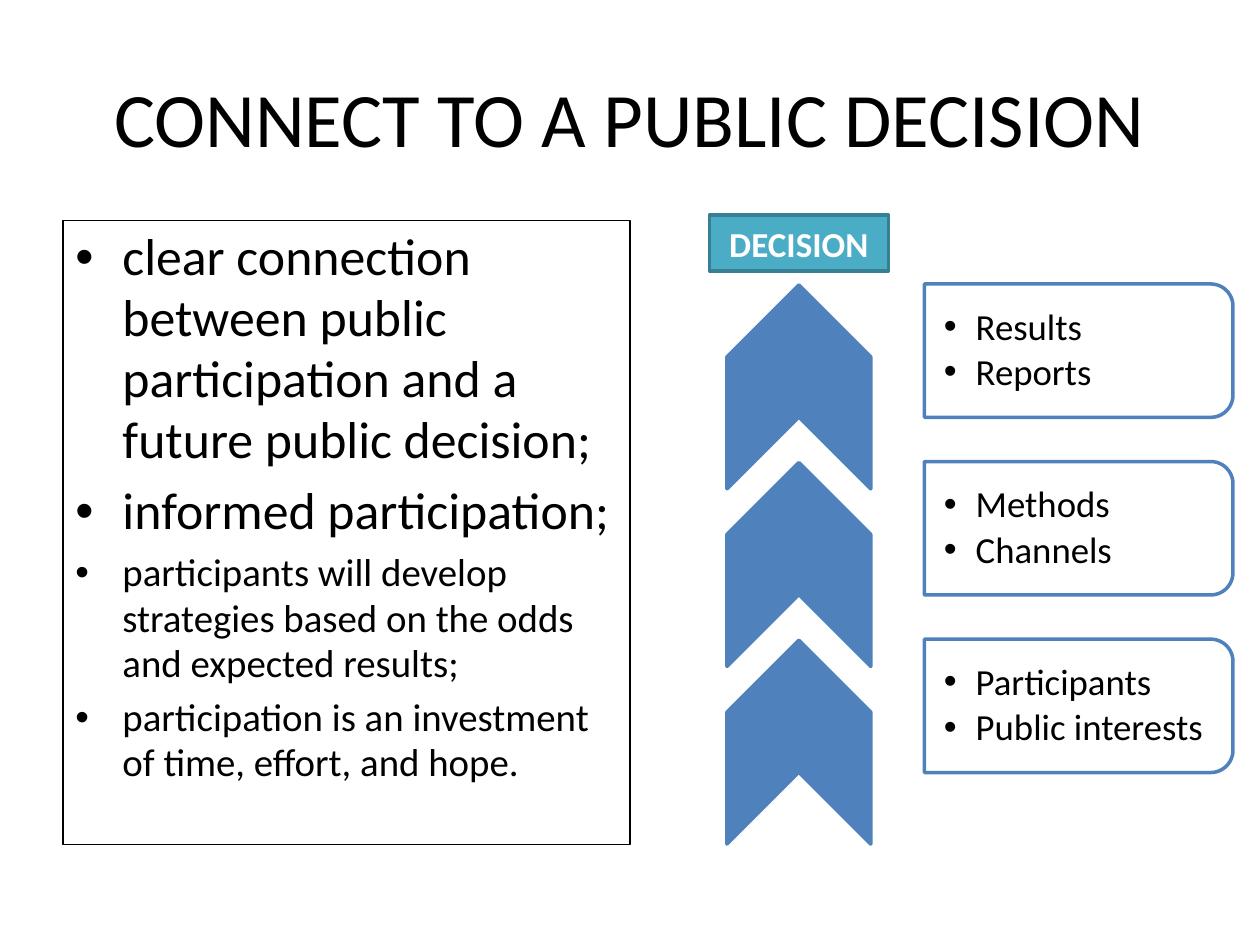
from dataclasses import dataclass

import pptx
import pptx.dml.color
import pptx.enum.shapes
import pptx.enum.text
import pptx.oxml.ns
import pptx.util
from lxml import etree
from pptx.dml.color import RGBColor
from pptx.enum.shapes import MSO_SHAPE
from pptx.enum.text import MSO_ANCHOR, PP_ALIGN
from pptx.util import Cm, Pt

BLACK = RGBColor(0x00, 0x00, 0x00)
WHITE = RGBColor(0xFF, 0xFF, 0xFF)
BLUE = RGBColor(0x4F, 0x81, 0xBD)
TEAL = RGBColor(0x4B, 0xAC, 0xC6)
DARK_TEAL = RGBColor(0x37, 0x7F, 0x92)
FONT = "Calibri"
STEP_PITCH = 3.58


@dataclass
class Area:
    """A rectangle in centimetres."""
    left: float
    top: float
    width: float
    height: float

    def lengths(self) -> tuple:
        return Cm(self.left), Cm(self.top), Cm(self.width), Cm(self.height)

    def lowered(self, distance: float) -> "Area":
        return Area(self.left, self.top + distance, self.width, self.height)


@dataclass
class Point:
    text: str
    size: float


def add_panel(page, kind, area: Area, line: RGBColor, fill=None,
              weight: float = 2, rotation: float = 0):
    panel = page.shapes.add_shape(kind, *area.lengths())
    panel.shadow.inherit = False
    panel.rotation = rotation
    if fill is None:
        panel.fill.background()
    else:
        panel.fill.solid()
        panel.fill.fore_color.rgb = fill
    panel.line.color.rgb = line
    panel.line.width = Pt(weight)
    return panel


def set_opacity(panel, percent: int) -> None:
    color = panel.fill._xPr.find(".//" + pptx.oxml.ns.qn("a:srgbClr"))
    etree.SubElement(color, pptx.oxml.ns.qn("a:alpha"), val=str(percent * 1000))


def set_frame(box, anchor, margins: tuple = (0.25, 0.13, 0.25, 0.13)) -> None:
    frame = box.text_frame
    frame.word_wrap = True
    frame.vertical_anchor = anchor
    (frame.margin_left, frame.margin_top,
     frame.margin_right, frame.margin_bottom) = map(Cm, margins)


def add_text(box, text: str, *, size: float, color: RGBColor = BLACK,
             bold: bool = False, align=PP_ALIGN.LEFT, indent: float = 0,
             before: float = 0, after: float = 0, spacing: float = 1.0) -> None:
    """Write one paragraph; an indent gives it a hanging bullet."""
    frame = box.text_frame
    para = frame.add_paragraph() if frame.text else frame.paragraphs[0]
    para.alignment = align
    para.line_spacing = spacing
    para.space_before = Pt(before)
    para.space_after = Pt(after)
    if indent:
        props = para._p.get_or_add_pPr()
        props.set("marL", str(Cm(indent)))
        props.set("indent", str(-Cm(indent)))
        etree.SubElement(props, pptx.oxml.ns.qn("a:buFont"), typeface="Arial")
        etree.SubElement(props, pptx.oxml.ns.qn("a:buChar"), char="•")
    span = para.add_run()
    span.text = text
    span.font.name = FONT
    span.font.size = Pt(size)
    span.font.bold = bold
    span.font.color.rgb = color


def add_step(page, row: int, labels: tuple) -> None:
    """Draw an upward chevron and the card beside it."""
    drop = row * STEP_PITCH
    add_panel(page, MSO_SHAPE.CHEVRON, Area(14.05, 6.35, 4.11, 2.9).lowered(drop),
              BLUE, BLUE, rotation=270)
    card = add_panel(page, MSO_SHAPE.ROUND_2_SAME_RECTANGLE,
                     Area(20.4, 3.96, 2.69, 6.22).lowered(drop),
                     BLUE, WHITE, rotation=90)
    set_opacity(card, 90)
    # Upright text over the turned card
    box = page.shapes.add_textbox(*Area(18.62, 5.87, 6.1, 2.41).lowered(drop).lengths())
    set_frame(box, MSO_ANCHOR.MIDDLE, (0.41, 0.03, 0.03, 0.03))
    for label in labels:
        add_text(box, label, size=21, indent=0.64, after=3.15, spacing=0.9)


def main() -> None:
    deck = pptx.Presentation()
    deck.slide_width, deck.slide_height = Cm(25.4), Cm(19.05)
    page = deck.slides.add_slide(deck.slide_layouts[6])

    # Title
    title = page.shapes.add_textbox(*Area(1.27, 0.76, 22.86, 3.18).lengths())
    set_frame(title, MSO_ANCHOR.MIDDLE)
    add_text(title, "CONNECT TO A PUBLIC DECISION", size=44, align=PP_ALIGN.CENTER)

    # Framed list
    body = add_panel(page, MSO_SHAPE.RECTANGLE, Area(1.27, 4.45, 11.43, 12.57),
                     BLACK, weight=0.75)
    set_frame(body, MSO_ANCHOR.TOP, (0.25, 0.13, 0.1, 0.13))
    points = [
        Point("clear connection between public participation and a future public decision;", 29.6),
        Point("informed participation;", 29.6),
        Point("participants will develop strategies based on the odds and expected results;", 22.2),
        Point("participation is an investment of time, effort, and hope.", 22.2),
    ]
    for point in points:
        add_text(body, point.text, size=point.size, indent=0.95,
                 before=0.2 * point.size, spacing=0.98)

    # Steps towards the decision
    steps = [("Results", "Reports"), ("Methods", "Channels"),
             ("Participants", "Public interests")]
    for row, labels in enumerate(steps):
        add_step(page, row, labels)

    # Decision label
    decision = add_panel(page, MSO_SHAPE.RECTANGLE, Area(14.3, 4.34, 3.61, 1.12),
                         DARK_TEAL, TEAL)
    set_frame(decision, MSO_ANCHOR.MIDDLE)
    add_text(decision, "DECISION", size=20, color=WHITE, bold=True,
             align=PP_ALIGN.CENTER)

    deck.save("out.pptx")


if __name__ == "__main__":
    main()
